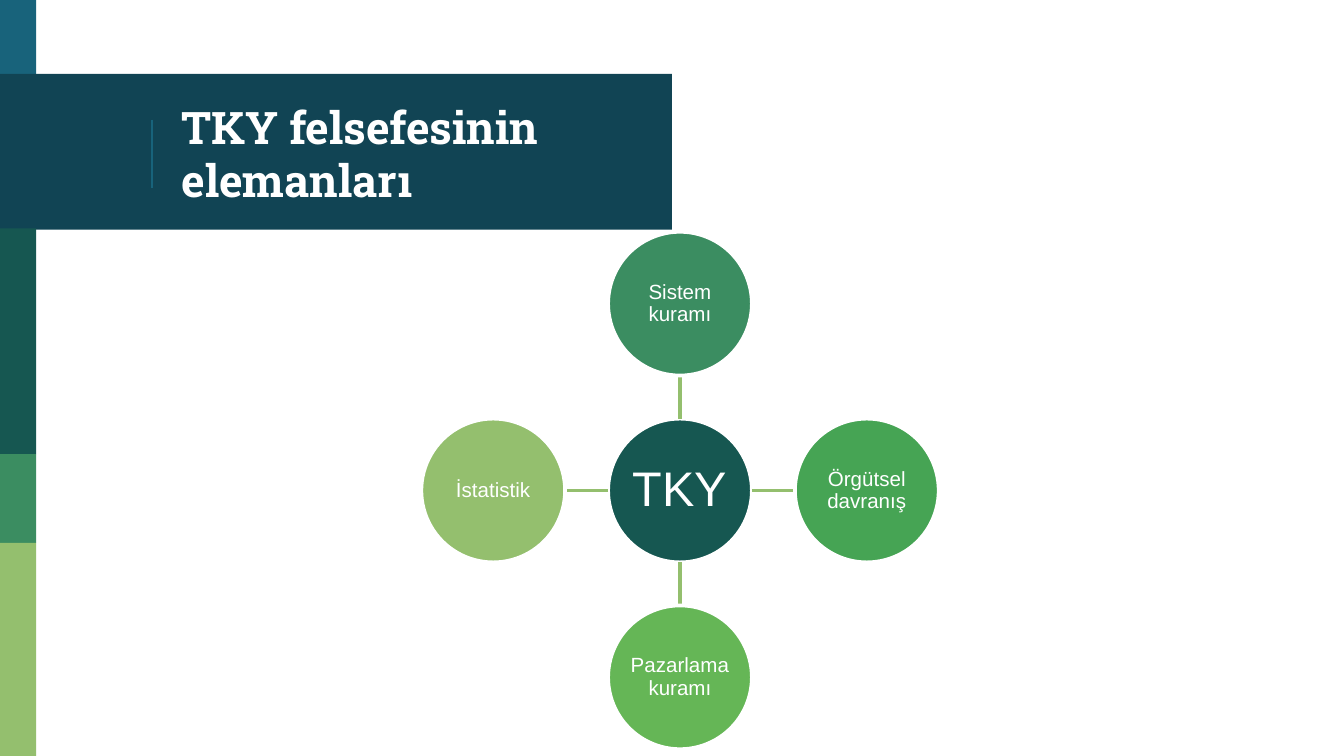
from lxml import etree
from pptx import Presentation
from pptx.dml.color import RGBColor
from pptx.enum import shapes, text
from pptx.oxml.ns import qn
from pptx.util import Inches, Pt

WHITE = RGBColor(0xFF, 0xFF, 0xFF)
BLUE = RGBColor(0x18, 0x63, 0x7B)
NAVY = RGBColor(0x11, 0x44, 0x54)
TEAL = RGBColor(0x16, 0x57, 0x51)
GREEN = RGBColor(0x3B, 0x8D, 0x61)
MID_GREEN = RGBColor(0x46, 0xA4, 0x54)
LIGHT_GREEN = RGBColor(0x65, 0xB6, 0x56)
LIME = RGBColor(0x94, 0xBF, 0x6E)

CENTER_X, CENTER_Y = 5.06, 3.65
DIAMETER = 1.07
SPACING = 1.39  # hub centre to outer circle centre

# left, top, width, height, colour
BANDS = [
    (0, 0, 0.27, 0.58, BLUE),
    (0, 0.55, 5, 1.16, NAVY),
    (0, 1.7, 0.27, 1.68, TEAL),
    (0, 3.38, 0.27, 0.66, GREEN),
    (0, 4.04, 0.27, 1.59, LIME),
]
# label, colour, direction from the hub
ELEMENTS = [
    ("Sistem kuramı", GREEN, (0, -1)),
    ("Örgütsel davranış", MID_GREEN, (1, 0)),
    ("Pazarlama kuramı", LIGHT_GREEN, (0, 1)),
    ("İstatistik", LIME, (-1, 0)),
]


def set_margins(tf, inches):
    tf.margin_left = tf.margin_right = Inches(inches)
    tf.margin_top = tf.margin_bottom = Inches(inches)


def set_font(p, name, size, bold=False):
    p.font.name = name
    p.font.size = Pt(size)
    p.font.bold = bold
    p.font.color.rgb = WHITE


def add_band(s, left, top, width, height, color):
    sp = s.shapes.add_shape(shapes.MSO_SHAPE.RECTANGLE, Inches(left),
                            Inches(top), Inches(width), Inches(height))
    sp.shadow.inherit = False
    sp.fill.solid()
    sp.fill.fore_color.rgb = color
    sp.line.fill.background()


def add_line(s, x1, y1, x2, y2, color, width):
    line = s.shapes.add_connector(shapes.MSO_CONNECTOR.STRAIGHT, Inches(x1),
                                  Inches(y1), Inches(x2), Inches(y2))
    line.line.color.rgb = color
    line.line.width = Pt(width)
    etree.SubElement(line._element.spPr, qn("a:effectLst"))


def add_circle(s, x, y, label, color, size):
    """Add a labelled circle centred on x, y."""
    sp = s.shapes.add_shape(shapes.MSO_SHAPE.OVAL, Inches(x - DIAMETER / 2),
                            Inches(y - DIAMETER / 2), Inches(DIAMETER),
                            Inches(DIAMETER))
    sp.shadow.inherit = False
    sp.fill.solid()
    sp.fill.fore_color.rgb = color
    sp.line.color.rgb = WHITE
    sp.line.width = Pt(2)
    tf = sp.text_frame
    tf.word_wrap = True
    tf.vertical_anchor = text.MSO_ANCHOR.MIDDLE
    set_margins(tf, 0.01)
    p = tf.paragraphs[0]
    p.text = label
    p.alignment = text.PP_ALIGN.CENTER
    p.line_spacing = 0.9
    set_font(p, "Arial", size)


def add_title(s, title):
    sp = s.shapes.title
    sp.left, sp.top = Inches(1.25), Inches(0.58)
    sp.width, sp.height = Inches(3.51), Inches(1.12)
    tf = sp.text_frame
    tf.word_wrap = True
    tf.auto_size = text.MSO_AUTO_SIZE.NONE
    tf.vertical_anchor = text.MSO_ANCHOR.MIDDLE
    set_margins(tf, 0.1)
    p = tf.paragraphs[0]
    p.text = title
    p.alignment = text.PP_ALIGN.LEFT
    set_font(p, "Roboto Slab", 24, bold=True)
    # Keep the title in front of the bands
    s.shapes._spTree.append(sp._element)


def add_radial_diagram(s):
    add_circle(s, CENTER_X, CENTER_Y, "TKY", TEAL, 26)
    near, far = DIAMETER / 2, SPACING - DIAMETER / 2
    for label, color, (dx, dy) in ELEMENTS:
        add_line(s, CENTER_X + dx * near, CENTER_Y + dy * near,
                 CENTER_X + dx * far, CENTER_Y + dy * far, LIME, 2)
        add_circle(s, CENTER_X + dx * SPACING, CENTER_Y + dy * SPACING,
                   label, color, 11)


def main():
    prs = Presentation()
    prs.slide_width = Inches(10)
    prs.slide_height = prs.slide_width * 9 // 16
    s = prs.slides.add_slide(prs.slide_layouts[5])
    for band in BANDS:
        add_band(s, *band)
    add_line(s, 1.13, 0.89, 1.13, 1.4, BLUE, 0.75)
    add_title(s, "TKY felsefesinin elemanları")
    add_radial_diagram(s)
    prs.save("out.pptx")


if __name__ == "__main__":
    main()
